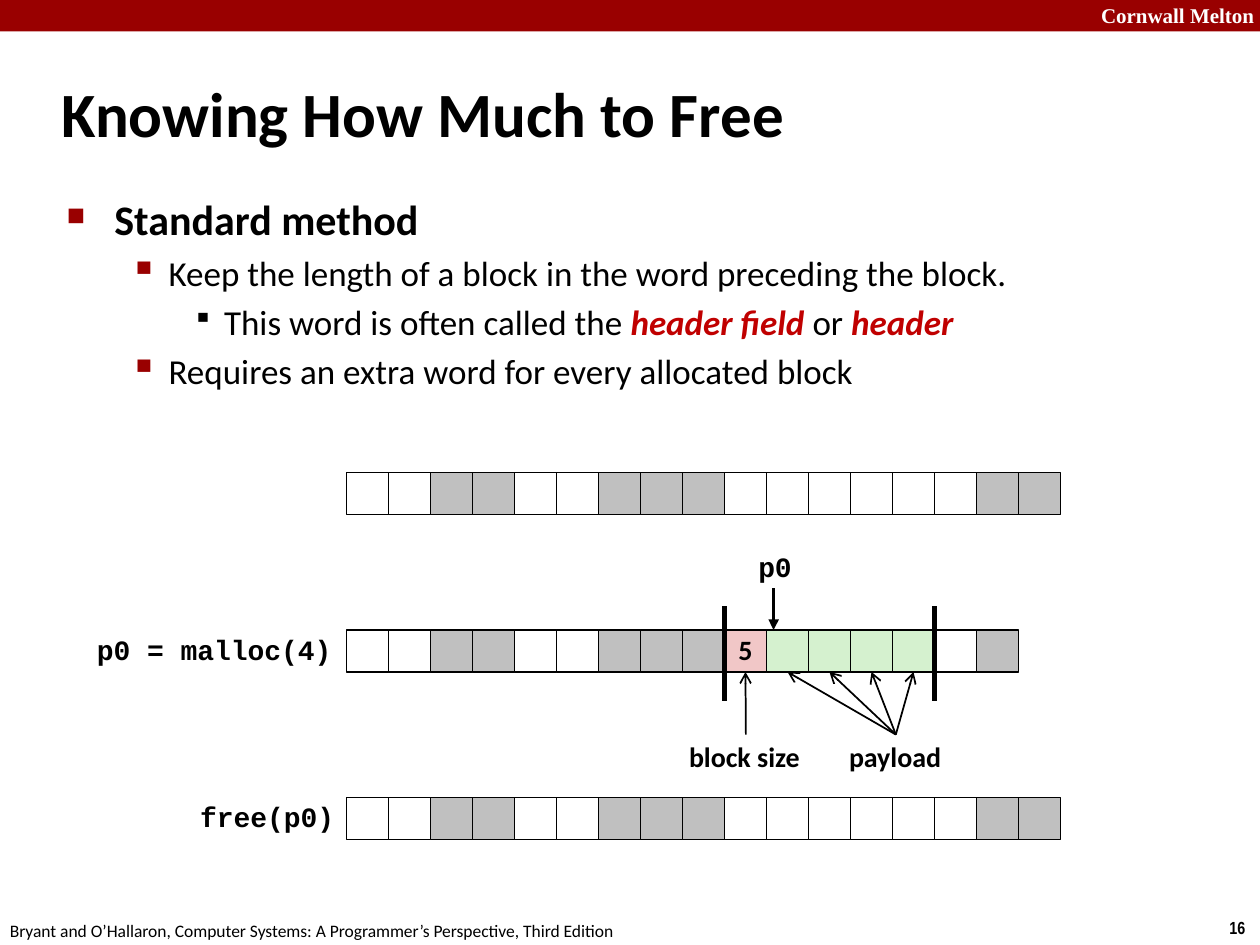
"""Build a slide on how a heap allocator knows how much memory to free."""
from lxml.etree import SubElement
from pptx import Presentation
from pptx.dml.color import RGBColor
from pptx.enum.shapes import MSO_CONNECTOR, MSO_SHAPE
from pptx.enum.text import MSO_ANCHOR, PP_ALIGN
from pptx.oxml.ns import qn
from pptx.util import Inches, Pt


class Theme:
    black = RGBColor.from_string("000000")
    white = RGBColor.from_string("FFFFFF")
    band = RGBColor.from_string("990000")
    emphasis = RGBColor.from_string("C00000")
    allocated = RGBColor.from_string("C0C0C0")
    header = RGBColor.from_string("F1C7C7")
    payload = RGBColor.from_string("D5F1CF")
    body, code, serif, narrow = "Calibri", "Courier New", "Times New Roman", "Arial Narrow"
    title, heading, bullet, label, brand, footer = 36, 24, 20, 16, 12, 10


def style_run(r, size, font=Theme.body, color=Theme.black, bold=True, italic=False):
    r.font.size, r.font.name = Pt(size), font
    r.font.bold, r.font.italic = bold, italic
    r.font.color.rgb = color


def add_line(x1, y1, x2, y2, width, arrow=None):
    line = s.shapes.add_connector(
        MSO_CONNECTOR.STRAIGHT, Inches(x1), Inches(y1), Inches(x2), Inches(y2))
    line.line.color.rgb = Theme.black
    line.line.width = Pt(width)
    if arrow:
        SubElement(line.line._get_or_add_ln(), qn("a:tailEnd"), type=arrow)
    SubElement(line._element.spPr, qn("a:effectLst"))
    return line


prs = Presentation()
prs.slide_width, prs.slide_height = Inches(10), Inches(7.5)
s = prs.slides.add_slide(prs.slide_layouts[6])

band = s.shapes.add_shape(MSO_SHAPE.RECTANGLE, 0, 0, prs.slide_width, Inches(0.25))
band.shadow.inherit = False
band.fill.solid()
band.fill.fore_color.rgb = Theme.band
band.line.fill.background()

labels = [
    ("Cornwall Melton", 8.64, -0.03, 1.43, 0.3, Theme.brand, Theme.serif, Theme.white, True, 1),
    ("16", 9.66, 7.23, 0.34, 0.27, Theme.footer, Theme.narrow, Theme.black, True, 1),
    ("Bryant and O’Hallaron, Computer Systems: A Programmer’s Perspective, Third Edition",
     -0.02, 7.25, 5.08, 0.27, Theme.footer, Theme.body, Theme.black, False, 1),
    ("Knowing How Much to Free", 0.39, 0.48, 8.3, 0.83,
     Theme.title, Theme.body, Theme.black, True, 1),
    ("p0 = malloc(4)", 0.67, 4.99, 2.09, 0.36, Theme.label, Theme.code, Theme.black, True, 0.94),
    ("p0", 5.92, 4.33, 0.47, 0.35, Theme.label, Theme.code, Theme.black, True, 0.94),
    ("free(p0)", 1.49, 6.32, 1.28, 0.36, Theme.label, Theme.code, Theme.black, True, 0.94),
    ("block size", 5.37, 5.83, 1.09, 0.37, Theme.label, Theme.body, Theme.black, True, 0.98),
    ("payload", 6.64, 5.83, 0.94, 0.37, Theme.label, Theme.body, Theme.black, True, 0.98),
]
for text, x, y, w, h, size, font, color, bold, spacing in labels:
    tf = s.shapes.add_textbox(Inches(x), Inches(y), Inches(w), Inches(h)).text_frame
    tf.word_wrap = False
    tf.text = text
    if size == Theme.title:
        tf.vertical_anchor = MSO_ANCHOR.MIDDLE
    p = tf.paragraphs[0]
    p.line_spacing = spacing
    style_run(p.runs[0], size, font, color, bold)

levels = [
    (0.38, 0.38, "■", 60, Theme.band, Theme.heading),
    (0.81, 0.31, "▪", 110, Theme.band, Theme.bullet),
    (1.25, 0.25, "▪", 80, Theme.black, Theme.bullet),
]
bullets = [
    (0, ["Standard method"]),
    (1, ["Keep the length of a block in the word preceding the block."]),
    (2, ["This word is often called the ", "header field ", "or ", "header"]),
    (1, ["Requires an extra word for every allocated block"]),
]
tf = s.shapes.add_textbox(Inches(0.43), Inches(1.49), Inches(8.64), Inches(5.44)).text_frame
tf.word_wrap = True
for i, (level, texts) in enumerate(bullets):
    margin, hang, char, percent, color, size = levels[level]
    p = tf.add_paragraph() if i else tf.paragraphs[0]
    p.level = level
    p.space_before = Pt(0.2 * size)
    pPr = p._p.get_or_add_pPr()
    pPr.set("marL", str(Inches(margin)))
    pPr.set("indent", str(-Inches(hang)))
    SubElement(SubElement(pPr, qn("a:buClr")), qn("a:srgbClr"), val=str(color))
    SubElement(pPr, qn("a:buSzPct"), val=str(percent * 1000))
    SubElement(pPr, qn("a:buChar"), char=char)
    for j, text in enumerate(texts):
        r = p.add_run()
        r.text = text
        term = j % 2 == 1
        style_run(r, size, color=Theme.emphasis if term else Theme.black,
                  bold=term or level == 0, italic=term)

left, cell = 2.75, 1 / 3
fills = {".": Theme.white, "#": Theme.allocated, "5": Theme.header, "p": Theme.payload}
heap_rows = [
    (3.75, "..##..###.......##"[:14] + ".##"),
    (5, "..##..###5pppp.#"),
    (6.33, "..##..###......##"),
]
block_cells = []
for y, words in heap_rows:
    for i, word in enumerate(words):
        sp = s.shapes.add_shape(MSO_SHAPE.RECTANGLE, Inches(left + i * cell), Inches(y),
                                Inches(cell), Inches(cell))
        sp.shadow.inherit = False
        sp.fill.solid()
        sp.fill.fore_color.rgb = fills[word]
        sp.line.color.rgb = Theme.black
        sp.line.width = Pt(1)
        if word in "5p":
            block_cells.append(sp)

tf = block_cells[0].text_frame
tf.word_wrap = False
tf.vertical_anchor = MSO_ANCHOR.MIDDLE
tf.text = "5"
p = tf.paragraphs[0]
p.alignment = PP_ALIGN.CENTER
p.line_spacing = 0.98
style_run(p.runs[0], Theme.label)

for boundary in (9, 14):
    x = left + boundary * cell
    add_line(x, 4.81, x, 5.56, 3)
add_line(6.14, 4.67, 6.14, 5, 2, "triangle")
for i, sp in enumerate(block_cells):
    arrow = add_line(7.11 if i else 5.92, 5.83, 6, 5.33, 1, "arrow")
    arrow.end_connect(sp, 2)

prs.save("out.pptx")
